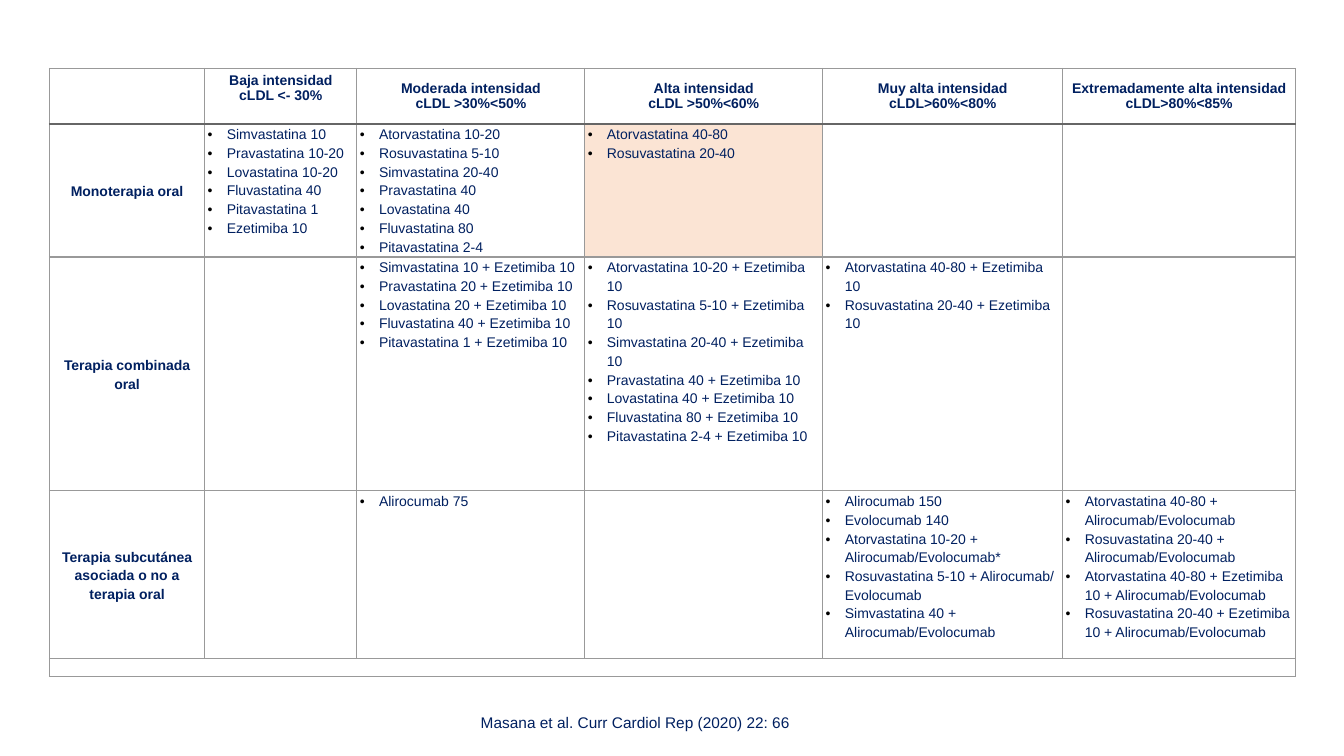
import pptx
import pptx.dml.color
import pptx.enum.text
import pptx.oxml.ns
import pptx.util
from lxml import etree

Inches = pptx.util.Inches
Pt = pptx.util.Pt
qn = pptx.oxml.ns.qn
ALIGN = pptx.enum.text.PP_ALIGN
ANCHOR = pptx.enum.text.MSO_ANCHOR

NAVY, WHITE, PEACH = "002060", "FFFFFF", "FBE4D4"
GREY, DARK, BLACK = "999999", "666666", "000000"

WIDTHS = [1.54, 1.51, 2.26, 2.36, 2.38, 2.31]
HEIGHTS = [0.55, 1.32, 2.32, 1.66, 0.18]

HEADS = [
    [],
    ["Baja intensidad", "cLDL <- 30%"],
    ["Moderada intensidad", "cLDL >30%<50%"],
    ["Alta intensidad", "cLDL >50%<60%"],
    ["Muy alta intensidad", "cLDL>60%<80%"],
    ["Extremadamente alta intensidad", "cLDL>80%<85%"],
]
ROWS = [
    [
        ["Monoterapia oral"],
        ["Simvastatina 10", "Pravastatina 10-20", "Lovastatina 10-20",
         "Fluvastatina 40", "Pitavastatina 1", "Ezetimiba 10"],
        ["Atorvastatina 10-20", "Rosuvastatina 5-10", "Simvastatina 20-40",
         "Pravastatina 40", "Lovastatina 40", "Fluvastatina 80",
         "Pitavastatina 2-4"],
        ["Atorvastatina 40-80", "Rosuvastatina 20-40"],
        [],
        [],
    ],
    [
        ["Terapia combinada oral"],
        [],
        ["Simvastatina 10 + Ezetimiba 10", "Pravastatina 20 + Ezetimiba 10",
         "Lovastatina 20 + Ezetimiba 10", "Fluvastatina 40 + Ezetimiba 10",
         "Pitavastatina 1 + Ezetimiba 10"],
        ["Atorvastatina 10-20 + Ezetimiba 10",
         "Rosuvastatina 5-10 + Ezetimiba 10",
         "Simvastatina 20-40 + Ezetimiba 10",
         "Pravastatina 40 + Ezetimiba 10", "Lovastatina 40 + Ezetimiba 10",
         "Fluvastatina 80 + Ezetimiba 10",
         "Pitavastatina 2-4 + Ezetimiba 10"],
        ["Atorvastatina 40-80 + Ezetimiba 10",
         "Rosuvastatina 20-40 + Ezetimiba 10"],
        [],
    ],
    [
        ["Terapia subcutánea asociada o no a terapia oral"],
        [],
        ["Alirocumab 75"],
        [],
        ["Alirocumab 150", "Evolocumab 140",
         "Atorvastatina 10-20 + Alirocumab/Evolocumab*",
         "Rosuvastatina 5-10 + Alirocumab/ Evolocumab",
         "Simvastatina 40 + Alirocumab/Evolocumab"],
        ["Atorvastatina 40-80 + Alirocumab/Evolocumab",
         "Rosuvastatina 20-40 + Alirocumab/Evolocumab",
         "Atorvastatina 40-80 + Ezetimiba 10 + Alirocumab/Evolocumab",
         "Rosuvastatina 20-40 + Ezetimiba 10 + Alirocumab/Evolocumab"],
    ],
]


def tint(code):
    return pptx.dml.color.RGBColor.from_string(code)


class Deck:
    """Holds the text style and the current slide, and draws its elements."""

    def __init__(self, slide, face="Arial", ink=NAVY):
        self.slide, self.face, self.ink = slide, face, ink

    def run(self, para, text, size=10, bold=False):
        run = para.add_run()
        run.text = text
        font = run.font
        font.name, font.size, font.bold = self.face, Pt(size), bold
        font.color.rgb = tint(self.ink)

    def bullet(self, para):
        props = para._p.get_or_add_pPr()
        props.set("marL", str(Inches(0.19)))
        props.set("indent", str(-Inches(0.19)))
        color = etree.SubElement(props, qn("a:buClr"))
        etree.SubElement(color, qn("a:srgbClr"), val=BLACK)
        etree.SubElement(props, qn("a:buFont"), typeface=self.face)
        etree.SubElement(props, qn("a:buChar"), char="•")

    def edge(self, cell, side, color, width):
        props = cell._tc.get_or_add_tcPr()
        line = etree.SubElement(props, qn("a:ln" + side), w=str(Pt(width)))
        fill = etree.SubElement(line, qn("a:solidFill"))
        etree.SubElement(fill, qn("a:srgbClr"), val=color)

    def cell(self, cell, lines, heavy="", fill=WHITE, head=False, space=None):
        for side in "LRTB":
            color, width = (DARK, 1.5) if side == heavy else (GREY, 1)
            self.edge(cell, side, color, width)
        cell.fill.solid()
        cell.fill.fore_color.rgb = tint(fill)
        cell.margin_left = cell.margin_right = Inches(0.03)
        cell.margin_top = cell.margin_bottom = 0
        cell.vertical_anchor = ANCHOR.MIDDLE if head else ANCHOR.TOP
        frame = cell.text_frame
        for i, text in enumerate(lines):
            para = frame.add_paragraph() if i else frame.paragraphs[0]
            if head:
                para.alignment = ALIGN.CENTER
            else:
                self.bullet(para)
            if space:
                para.line_spacing = space
            self.run(para, text, bold=head)
        if not lines:
            para = frame.paragraphs[0]._p
            etree.SubElement(para, qn("a:endParaRPr"), sz="1000")

    def table(self, left, top):
        frame = self.slide.shapes.add_table(
            len(HEIGHTS), len(WIDTHS), Inches(left), Inches(top),
            Inches(sum(WIDTHS)), Inches(sum(HEIGHTS)))
        grid = frame.table
        grid.first_row = grid.horz_banding = False
        for col, width in zip(grid.columns, WIDTHS):
            col.width = Inches(width)
        for row, height in zip(grid.rows, HEIGHTS):
            row.height = Inches(height)
        for c, lines in enumerate(HEADS):
            self.cell(grid.cell(0, c), lines, heavy="B", head=True)
        grid.cell(0, 1).margin_bottom = Inches(0.16)
        for r, row in enumerate(ROWS, 1):
            for c, lines in enumerate(row):
                self.cell(grid.cell(r, c), lines, heavy="T" if r == 1 else "",
                          fill=PEACH if (r, c) == (1, 3) else WHITE,
                          head=c == 0, space=1.2)
        last = len(HEIGHTS) - 1
        grid.cell(last, 0).merge(grid.cell(last, len(WIDTHS) - 1))
        for c in range(len(WIDTHS)):
            self.cell(grid.cell(last, c), [])

    def label(self, left, top, width, height, text, size):
        box = self.slide.shapes.add_textbox(
            Inches(left), Inches(top), Inches(width), Inches(height))
        box.text_frame.word_wrap = True
        self.run(box.text_frame.paragraphs[0], text, size)


def main():
    show = pptx.Presentation()
    show.slide_width, show.slide_height = Inches(13.33), Inches(7.5)
    deck = Deck(show.slides.add_slide(show.slide_layouts[6]))
    deck.table(0.49, 0.68)
    deck.label(4.67, 7.03, 4, 0.29,
               "Masana et al. Curr Cardiol Rep (2020) 22: 66", 11)
    show.save("out.pptx")


if __name__ == "__main__":
    main()
